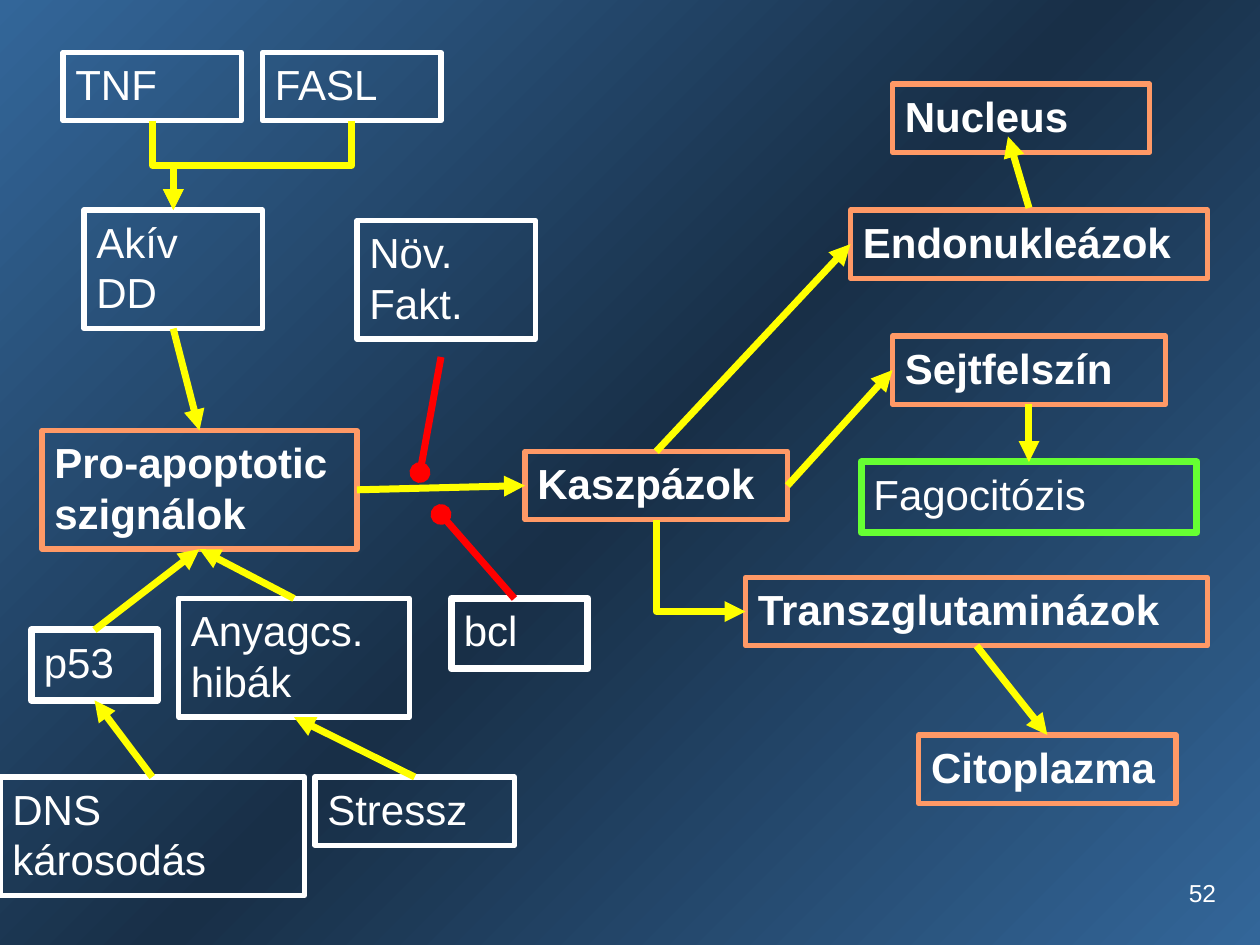
from copy import deepcopy

from pptx import Presentation
from pptx.dml.color import RGBColor
from pptx.enum.dml import MSO_LINE
from pptx.enum.shapes import MSO_CONNECTOR, MSO_SHAPE
from pptx.enum.text import MSO_ANCHOR, MSO_AUTO_SIZE, PP_ALIGN
from pptx.oxml.ns import qn
from pptx.util import Inches, Pt
from lxml.etree import SubElement

BLUE = RGBColor(0x33, 0x66, 0x99)
NAVY = RGBColor(0x18, 0x2F, 0x47)
WHITE = RGBColor(0xFF, 0xFF, 0xFF)
CORAL = RGBColor(0xFF, 0x99, 0x66)
GREEN = RGBColor(0x66, 0xFF, 0x33)
GOLD = RGBColor(0xFF, 0xFF, 0x00)
RED = RGBColor(0xFF, 0x00, 0x00)

TOP, LEFT, BASE, RIGHT = range(4)
HIGH = {(1, 3): 6.5, (1, 4): 6.7, (2, 3): 11.3}
FONT = {"name": "Arial", "size": Pt(24), "bold": False}
FRAME = {"word_wrap": True, "vertical_anchor": MSO_ANCHOR.TOP,
         "auto_size": MSO_AUTO_SIZE.SHAPE_TO_FIT_TEXT}
PLAIN = {"line": WHITE, "width": 3, "bold": False}
THICK = {"line": WHITE, "width": 4, "bold": False}
LIME = {"line": GREEN, "width": 4, "bold": False}
STRONG = {"line": CORAL, "width": 3, "bold": True}

BOXES = {
    "pro": ("Pro-apoptotic\vszignálok", 4, 41, 30, 2, STRONG),
    "dd": ("Akív\nDD", 8, 20, 17, 2, PLAIN),
    "tnf": ("TNF", 6, 5, 17, 1, PLAIN),
    "fasl": ("FASL", 25, 5, 17, 1, PLAIN),
    "faults": ("Anyagcs. hibák", 17, 57, 22, 2, PLAIN),
    "p53": ("p53", 3, 60, 12, 1, THICK),
    "dns": ("DNS károsodás", 0, 74, 29, 2, PLAIN),
    "stress": ("Stressz", 30, 74, 19, 1, PLAIN),
    "casp": ("Kaszpázok", 50, 43, 25, 1, STRONG),
    "bcl": ("bcl", 43, 57, 13, 1, THICK),
    "growth": ("Növ. Fakt.", 34, 21, 17, 2, PLAIN),
    "trans": ("Transzglutaminázok", 71, 55, 44, 1, STRONG),
    "cyto": ("Citoplazma", 87.5, 70, 24.5, 1, STRONG),
    "cell": ("Sejtfelszín", 85, 32, 26, 1, STRONG),
    "endo": ("Endonukleázok", 81, 20, 34, 1, STRONG),
    "phago": ("Fagocitózis", 82, 44, 32, 1, LIME),
    "core": ("Nucleus", 85, 8, 24.5, 1, STRONG),
}
LINKS = [
    ("dd", BASE, "pro", TOP), ("dns", TOP, "p53", BASE),
    ("p53", TOP, "pro", BASE), ("faults", TOP, "pro", BASE),
    ("stress", TOP, "faults", BASE), ("pro", RIGHT, "casp", LEFT),
    ("casp", RIGHT, "cell", LEFT), ("cell", BASE, "phago", TOP),
    ("trans", BASE, "cyto", TOP), ("casp", TOP, "endo", LEFT),
]
BENDS = [
    ("tnf", BASE, "dd", TOP, "bentConnector3"),
    ("fasl", BASE, "dd", TOP, "bentConnector3"),
    ("casp", BASE, "trans", LEFT, "bentConnector2"),
]
LINES = [
    ((42, 34), (40, 45), RED, "oval"),
    ((49, 57), (42, 49), RED, "oval"),
    ((98, 19.8), (96, 13), GOLD, "triangle"),
]


def grid(*units):
    """Turn grid units, twelve to the inch, into lengths."""
    return [Inches(unit / 12) for unit in units]


def format(item, values):
    """Set each named value on the item."""
    for name, value in values.items():
        setattr(item, name, value)


def paint(slide):
    """Fill the background with a diagonal three-stop gradient."""
    fill = slide.background.fill
    fill.gradient()
    fill.gradient_angle = 315
    stops = next(slide.element.iter(qn("a:gsLst")))
    stops.insert(1, deepcopy(stops[0]))
    for stop, place, color in zip(fill.gradient_stops, (0, 0.5, 1), (BLUE, NAVY, BLUE)):
        stop.position = place
        stop.color.rgb = color


def write(frame, text, align, **values):
    """Write white text with the given font values."""
    frame.text = text
    for para in frame.paragraphs:
        para.alignment = align
        for run in para.runs:
            format(run.font, FONT | values)
            run.font.color.rgb = WHITE


def box(slide, text, left, top, width, rows, style):
    """Add an outlined box sized by its rows of text."""
    high = HIGH[rows, style["width"]]
    shape = slide.shapes.add_shape(MSO_SHAPE.RECTANGLE, *grid(left, top, width, high))
    shape.shadow.inherit = False
    shape.fill.background()
    shape.line.color.rgb = style["line"]
    shape.line.width = Pt(style["width"])
    format(shape.text_frame, FRAME)
    write(shape.text_frame, text, PP_ALIGN.LEFT, bold=style["bold"])
    return shape


def line(slide, start=(0, 0), end=(0, 0), color=GOLD, tip="triangle"):
    """Add a thick line with a tip at its end."""
    wire = slide.shapes.add_connector(MSO_CONNECTOR.STRAIGHT, *grid(*start, *end))
    format(wire.line, {"width": Pt(4), "dash_style": MSO_LINE.SOLID})
    wire.line.color.rgb = color
    SubElement(wire.line._get_or_add_ln(), qn("a:tailEnd"), type=tip)
    SubElement(wire.element.spPr, qn("a:effectLst"))
    return wire


def link(slide, first, out, last, into):
    """Join two boxes with an arrow."""
    wire = line(slide)
    wire.begin_connect(first, out)
    wire.end_connect(last, into)
    return wire


def bend(slide, first, out, last, into, kind):
    """Join two boxes with an elbow that sets off downward."""
    wire = link(slide, first, out, last, into)
    across, down = wire.end_x - wire.begin_x, wire.end_y - wire.begin_y
    wide = abs(across)
    mid_x, mid_y = (wire.begin_x + wire.end_x) // 2, (wire.begin_y + wire.end_y) // 2
    format(wire, {"left": mid_x - down // 2, "top": mid_y - wide // 2,
                  "width": down, "height": wide,
                  "rotation": 270 if across > 0 else 90})
    format(wire.element.spPr.xfrm, {"flipH": across > 0, "flipV": False})
    wire.element.spPr.find(qn("a:prstGeom")).set("prst", kind)


def main():
    """Build the slide of apoptosis pathways."""
    deck = Presentation()
    format(deck, {"slide_width": Inches(10), "slide_height": Inches(7.5)})
    slide = deck.slides.add_slide(deck.slide_layouts[6])
    paint(slide)
    page = slide.shapes.add_textbox(*grid(92, 82, 25, 6)).text_frame
    format(page, {"word_wrap": True, "vertical_anchor": MSO_ANCHOR.MIDDLE})
    write(page, "52", PP_ALIGN.RIGHT, size=Pt(14))
    nodes = {name: box(slide, *data) for name, data in BOXES.items()}
    for first, out, last, into in LINKS:
        link(slide, nodes[first], out, nodes[last], into)
    for first, out, last, into, kind in BENDS:
        bend(slide, nodes[first], out, nodes[last], into, kind)
    for data in LINES:
        line(slide, *data)
    deck.save("out.pptx")


if __name__ == "__main__":
    main()
